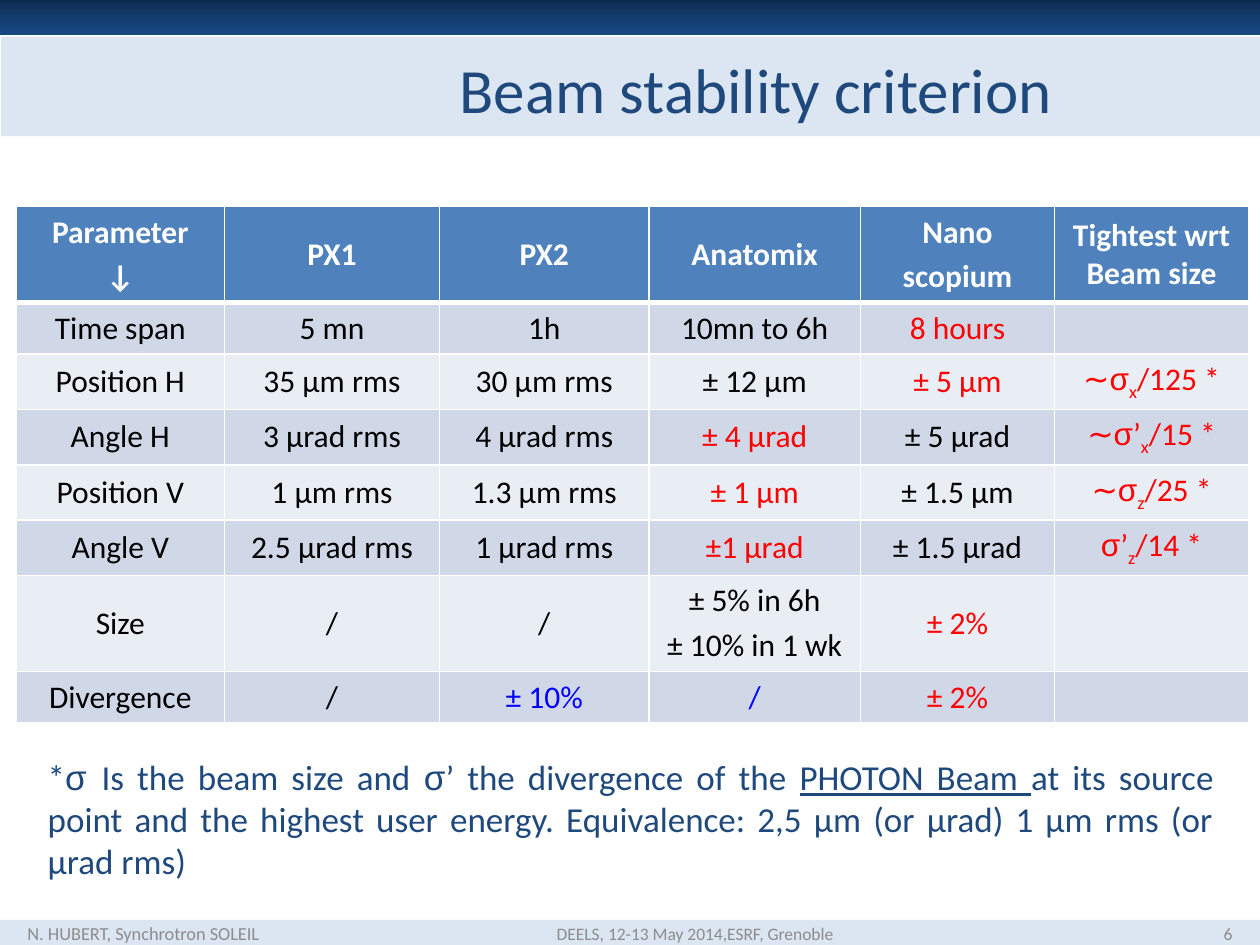
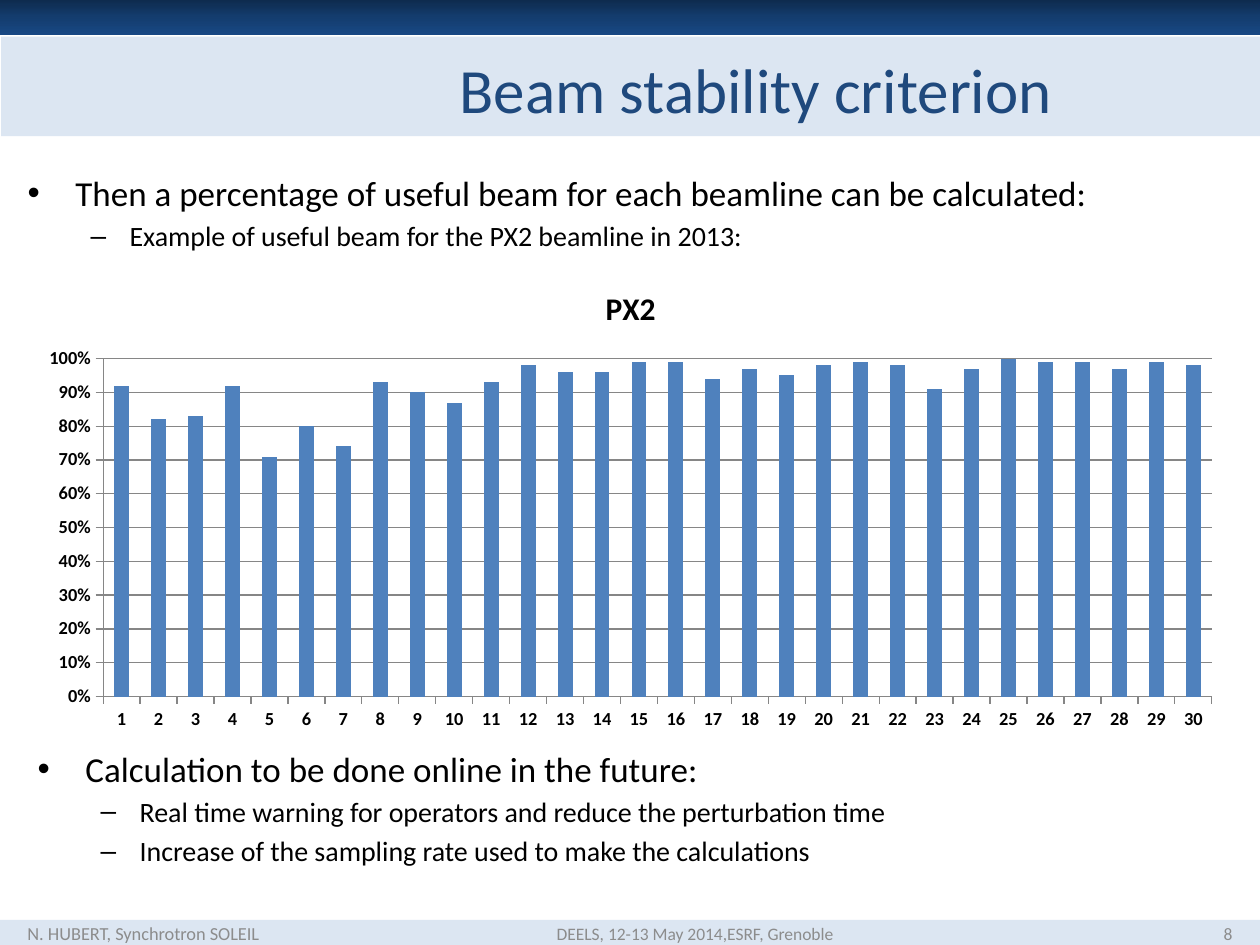
from copy import deepcopy

from lxml.etree import SubElement
from pptx import Presentation
from pptx.chart.data import CategoryChartData
from pptx.dml.color import RGBColor
from pptx.enum.chart import XL_CHART_TYPE as ChartType, XL_TICK_MARK as TickMark
from pptx.enum.shapes import MSO_SHAPE as Shape
from pptx.enum.text import MSO_ANCHOR as Anchor, PP_ALIGN as Align
from pptx.oxml.ns import qn
from pptx.util import Inches, Pt

# Shared style
FONT, SYMBOL_FONT = "Calibri", "Arial"
WHITE = RGBColor(0xFF, 0xFF, 0xFF)
BLACK = RGBColor(0, 0, 0)
RED = RGBColor(0xFF, 0, 0)
BLUE = RGBColor(0, 0, 0xFF)
NAVY = RGBColor(0x1F, 0x49, 0x7D)
GREY = RGBColor(0x8C, 0x8C, 0x8C)
GRID_GREY = RGBColor(0x86, 0x86, 0x86)
PALE_BLUE = RGBColor(0xDC, 0xE6, 0xF2)
ACCENT = RGBColor(0x4F, 0x81, 0xBD)
ROW_FILLS = RGBColor(0xD0, 0xD8, 0xE8), RGBColor(0xE9, 0xED, 0xF4)
TOP_GRADIENT = (RGBColor(0x0E, 0x2B, 0x4E), RGBColor(0x14, 0x3D, 0x6F),
                RGBColor(0x18, 0x48, 0x84))

TITLE = "Beam stability criterion"
AUTHOR = "N. HUBERT, Synchrotron SOLEIL"
EVENT = "DEELS, 12-13 May 2014,ESRF, Grenoble"

# Bullet levels: sign, left indent, hanging indent, text size
BULLETS = ("•", 0.38, 0.38, 20), ("–", 0.81, 0.31, 16)


def colored(text, color):
    return [[(text, {"color": color})]]


def sigma(symbol, prime, axis, ratio):
    """One paragraph such as σ’x/15 *, with the axis as a subscript."""
    runs = [(symbol, {"font": SYMBOL_FONT}), (prime, {}),
            (axis, {"baseline": -25000}), (ratio, {})]
    return [[(text, {"color": RED, **look}) for text, look in runs if text]]


HEADINGS = ["Parameter\n↓", "PX1", "PX2", "Anatomix", "Nano\nscopium",
            "Tightest wrt Beam size"]
CRITERIA = [
    ["Time span", "5 mn", "1h", "10mn to 6h", colored("8 hours", RED), ""],
    ["Position H", "35 µm rms", "30 µm rms", "± 12 µm", colored("± 5 µm", RED),
     sigma("∼σ", "", "x", "/125 *")],
    ["Angle H", "3 µrad rms", "4 µrad rms", colored("± 4 µrad", RED), "± 5 µrad",
     sigma("∼σ", "’", "x", "/15 *")],
    ["Position V", "1 µm rms", "1.3 µm rms", colored("± 1 µm", RED), "± 1.5 µm",
     sigma("∼σ", "", "z", "/25 *")],
    ["Angle V", "2.5 µrad rms", "1 µrad rms", colored("±1 µrad", RED), "± 1.5 µrad",
     sigma("σ", "’", "z", "/14 *")],
    ["Size", "/", "/", "± 5% in 6h\n± 10% in 1 wk", colored("± 2%", RED), ""],
    ["Divergence", "/", colored("± 10%", BLUE), colored("/", BLUE),
     colored("± 2%", RED), ""],
]
COLUMN_WIDTHS = [1.65, 1.71, 1.66, 1.68, 1.54, 1.54]
ROW_HEIGHT, TALL_ROW_HEIGHT = 0.41, 0.7

FOOTNOTE = [[
    "*", ("σ ", {"font": SYMBOL_FONT}), "Is the beam size and ",
    ("σ", {"font": SYMBOL_FONT}), "’ the divergence of the ",
    ("PHOTON Beam ", {"underline": True}),
    "at its source point and the highest user energy. "
    "Equivalence: 2,5 µm (or µrad) 1 µm rms (or µrad rms)",
]]

USEFUL_BEAM = [0.92, 0.82, 0.83, 0.92, 0.71, 0.8, 0.74, 0.93, 0.9, 0.87,
               0.93, 0.98, 0.96, 0.96, 0.99, 0.99, 0.94, 0.97, 0.95, 0.98,
               0.99, 0.98, 0.91, 0.97, 1, 0.99, 0.99, 0.97, 0.99, 0.98]


def format_run(run, size, color, font=FONT, bold=False, underline=False, baseline=0):
    run.font.name, run.font.size = font, Pt(size)
    run.font.bold, run.font.underline = bold, underline
    run.font.color.rgb = color
    if baseline:
        run._r.get_or_add_rPr().set("baseline", str(baseline))


def add_bullet(paragraph, level):
    sign, left, hanging, _ = BULLETS[level]
    paragraph.level = level
    props = paragraph._p.get_or_add_pPr()
    props.set("marL", str(Inches(left)))
    props.set("indent", str(-Inches(hanging)))
    SubElement(props, qn("a:buFont")).set("typeface", SYMBOL_FONT)
    SubElement(props, qn("a:buChar")).set("char", sign)


def write(frame, text, align=Align.LEFT, anchor=Anchor.TOP, levels=None, **look):
    """Fill a frame with a string, or with paragraphs made of runs."""
    frame.word_wrap = True
    frame.vertical_anchor = anchor
    paragraphs = text.split("\n") if isinstance(text, str) else text
    for index, content in enumerate(paragraphs):
        paragraph = frame.paragraphs[0] if index == 0 else frame.add_paragraph()
        if levels:
            add_bullet(paragraph, levels[index])
            look["size"] = BULLETS[levels[index]][3]
        paragraph.alignment = align
        paragraph.space_before = Pt(look["size"] * 0.2 if index else 0)
        for part in [content] if isinstance(content, str) else content:
            words, changes = (part, {}) if isinstance(part, str) else part
            run = paragraph.add_run()
            run.text = words
            format_run(run, **{**look, **changes})


def add_text(slide, box, text, **look):
    write(slide.shapes.add_textbox(*map(Inches, box)).text_frame, text, **look)


def add_band(slide, box):
    band = slide.shapes.add_shape(Shape.RECTANGLE, *map(Inches, box))
    band.shadow.inherit = False
    band.line.fill.background()
    band.fill.solid()
    band.fill.fore_color.rgb = PALE_BLUE
    return band


def add_top_band(slide, box):
    band = add_band(slide, box)
    band.fill.gradient()
    band.fill.gradient_angle = 270
    stop_list = band._element.spPr.find(qn("a:gradFill")).find(qn("a:gsLst"))
    stop_list.insert(1, deepcopy(stop_list[0]))
    for stop, color, position in zip(band.fill.gradient_stops, TOP_GRADIENT, (0, 0.5, 1)):
        stop.color.rgb, stop.position = color, position


def add_footer(slide, box, number):
    left, top, width, height = box
    add_band(slide, box)
    look = {"anchor": Anchor.MIDDLE, "color": GREY}
    add_text(slide, (left + 0.12, top, 2.76, height), AUTHOR, size=10.5, **look)
    add_text(slide, (left + 2.56, top, 5.91, height), EVENT, size=10,
             align=Align.CENTER, **look)
    add_text(slide, (left + width - 0.59, top, 0.47, height), str(number), size=10,
             align=Align.RIGHT, **look)


def add_base_slide(deck, number):
    slide = deck.slides.add_slide(deck.slide_layouts[5])
    add_footer(slide, (0, 7.3, 10, 0.21), number)
    add_band(slide, (0.01, 0.29, 9.99, 0.79))
    add_top_band(slide, (0, 0, 10.02, 0.28))
    # Title goes in front of the bands
    title = slide.shapes.title
    slide.shapes._spTree.append(title._element)
    title.left, title.top, title.width, title.height = map(Inches, (2.01, 0.29, 7.98, 0.82))
    write(title.text_frame, TITLE, align=Align.CENTER, anchor=Anchor.MIDDLE,
          size=36, color=NAVY)
    return slide


def add_borders(cell, **widths):
    for side in "LRTB":
        border = SubElement(cell._tc.get_or_add_tcPr(), qn(f"a:ln{side}"),
                            w=str(Pt(widths.get(side, 1))))
        fill = SubElement(border, qn("a:solidFill"))
        SubElement(fill, qn("a:srgbClr")).set("val", str(WHITE))


def add_criteria_table(slide, box):
    rows = [HEADINGS] + CRITERIA
    table = slide.shapes.add_table(len(rows), len(HEADINGS), *map(Inches, box)).table
    for column, width in zip(table.columns, COLUMN_WIDTHS):
        column.width = Inches(width)
    for r, texts in enumerate(rows):
        is_header = r == 0
        two_lines = any(isinstance(text, str) and "\n" in text for text in texts)
        table.rows[r].height = Inches(TALL_ROW_HEIGHT if two_lines else ROW_HEIGHT)
        for c, text in enumerate(texts):
            cell = table.cell(r, c)
            add_borders(cell, B=3 if is_header else 1, T=3 if r == 1 else 1)
            cell.fill.solid()
            cell.fill.fore_color.rgb = ACCENT if is_header else ROW_FILLS[(r - 1) % 2]
            cell.vertical_anchor = Anchor.MIDDLE
            write(cell.text_frame, text, align=Align.CENTER, anchor=None, size=18,
                  bold=is_header, color=WHITE if is_header else BLACK)


def format_axis(axis):
    axis.major_tick_mark, axis.minor_tick_mark = TickMark.OUTSIDE, TickMark.NONE
    axis.tick_labels.font.size = Pt(10.5)
    axis.tick_labels.font.bold = True
    axis.format.line.color.rgb = GRID_GREY


def add_useful_beam_chart(slide, box):
    data = CategoryChartData()
    data.categories = [str(n + 1) for n in range(len(USEFUL_BEAM))]
    data.add_series("PX2", USEFUL_BEAM)
    chart = slide.shapes.add_chart(ChartType.COLUMN_STACKED, *map(Inches, box), data).chart
    chart.has_legend = False
    chart.font.name, chart.font.size = FONT, Pt(10)
    chart.font.color.rgb = BLACK
    chart.has_title = True
    heading = chart.chart_title.text_frame.paragraphs[0].add_run()
    heading.text = "PX2"
    format_run(heading, size=18, color=BLACK, bold=True)

    plot = chart.plots[0]
    plot.gap_width, plot.overlap, plot.vary_by_categories = 150, 100, False
    plot.series[0].format.fill.solid()
    plot.series[0].format.fill.fore_color.rgb = ACCENT

    format_axis(chart.category_axis)
    share = chart.value_axis
    format_axis(share)
    share.minimum_scale, share.maximum_scale, share.major_unit = 0, 1, 0.1
    share.tick_labels.number_format = "0%"
    share.tick_labels.number_format_is_linked = False
    share.major_gridlines.format.line.color.rgb = GRID_GREY


def build_criteria_slide(deck):
    slide = add_base_slide(deck, 6)
    add_criteria_table(slide, (0.13, 1.64, 9.78, 3.83))
    add_text(slide, (0.28, 5.95, 9.45, 1.02), FOOTNOTE, align=Align.JUSTIFY,
             size=20, color=NAVY)


def build_useful_beam_slide(deck):
    slide = add_base_slide(deck, 8)
    look = {"align": Align.JUSTIFY, "color": BLACK}
    add_text(slide, (0.12, 1.31, 9.45, 0.87),
             ["Then a percentage of useful beam for each beamline can be calculated:",
              "Example of useful beam for the PX2 beamline in 2013:"],
             levels=(0, 1), **look)
    add_useful_beam_chart(slide, (0.2, 2.1, 9.61, 3.78))
    add_text(slide, (0.2, 5.88, 9.45, 0.87),
             ["Calculation to be done online in the future:",
              "Real time warning for operators and reduce the perturbation time",
              "Increase of the sampling rate used to make the calculations"],
             levels=(0, 1, 1), **look)


def main():
    deck = Presentation()
    deck.slide_width, deck.slide_height = Inches(10), Inches(7.5)
    build_criteria_slide(deck)
    build_useful_beam_slide(deck)
    deck.save("out.pptx")


if __name__ == "__main__":
    main()
